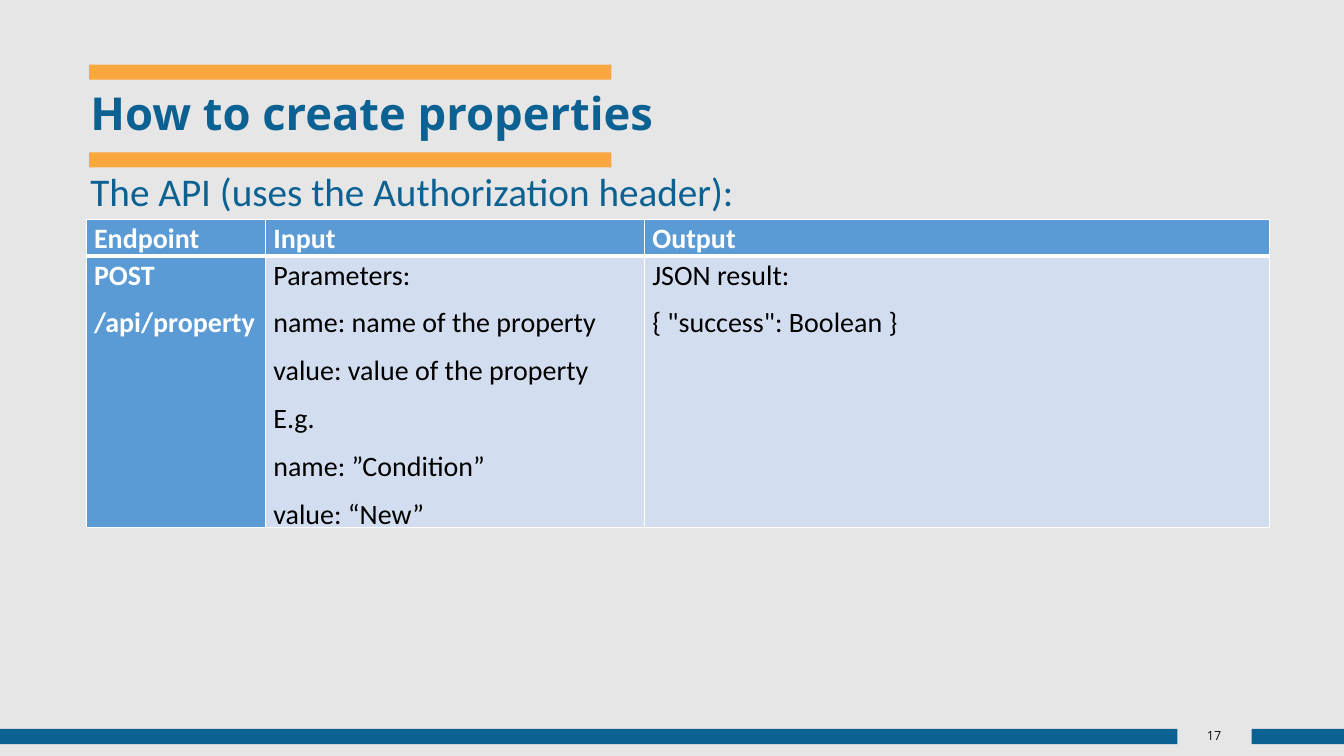
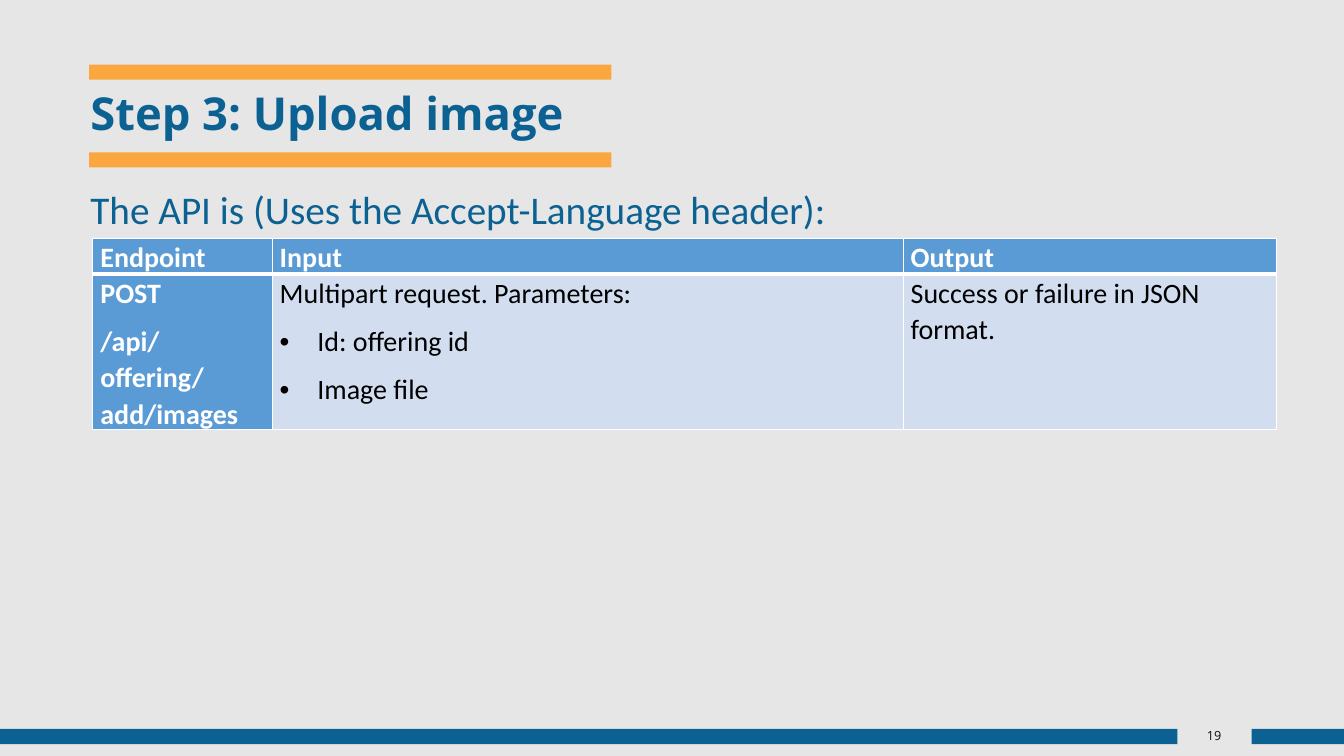
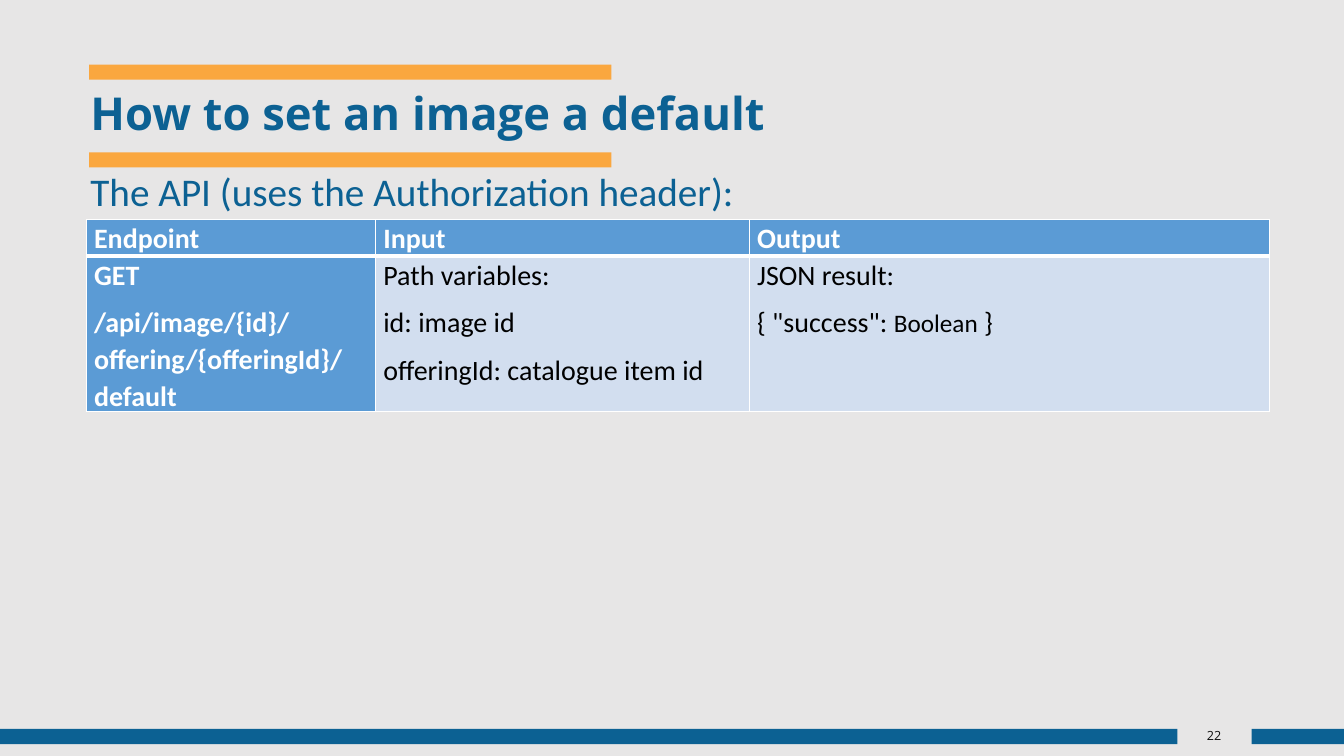
from dataclasses import dataclass
from typing import Any

from lxml.etree import SubElement
from pptx import Presentation
from pptx.dml.color import RGBColor as RGB
from pptx.enum.shapes import MSO_SHAPE as SHAPE
from pptx.enum.text import MSO_ANCHOR as ANCHOR, PP_ALIGN as ALIGN
from pptx.oxml.ns import qn
from pptx.util import Cm, Pt


@dataclass(frozen=True)
class Theme:
    paper: RGB = RGB.from_string("E7E6E6")
    orange: RGB = RGB.from_string("FAA73F")
    navy: RGB = RGB.from_string("0C6193")
    head: RGB = RGB.from_string("5B9BD5")
    body: RGB = RGB.from_string("D2DEEF")
    white: RGB = RGB.from_string("FFFFFF")
    black: RGB = RGB.from_string("000000")
    number: RGB = RGB.from_string("0D0D0D")
    display: str = "Open Sans"
    text: str = "Calibri"
    title_pt: float = 32.4
    intro_pt: float = 28
    cell_pt: float = 20
    small_pt: float = 18
    number_pt: float = 9


T = Theme()


@dataclass(frozen=True)
class Box:
    x: float
    y: float
    w: float
    h: float

    def emu(self) -> tuple[Cm, Cm, Cm, Cm]:
        return Cm(self.x), Cm(self.y), Cm(self.w), Cm(self.h)


@dataclass(frozen=True)
class Band:
    box: Box
    color: RGB


@dataclass(frozen=True)
class Line:
    text: str
    bullet: bool = False
    small: str = ""


@dataclass(frozen=True)
class ApiPage:
    number: str
    title: str
    intro: str
    intro_y: float
    table_x: float
    widths: tuple[float, ...]
    body_h: float
    cells: tuple[tuple[Line, ...], ...]
    title_w: float = 29.51


BAND_H = 0.38
INTRO_H = 1.45
HEAD_H = 0.91
BULLET_INDENT = Cm(0.95)
HEADINGS = ("Endpoint", "Input", "Output")
BANDS = (
    Band(Box(2.25, 1.63, 13.16, BAND_H), T.orange),
    Band(Box(2.25, 3.84, 13.16, BAND_H), T.orange),
    Band(Box(0, 18.37, 29.67, BAND_H), T.navy),
    Band(Box(31.54, 18.37, 2.33, BAND_H), T.navy),
)
CELL_FMT = {"margin_left": Cm(0.19), "margin_right": Cm(0.19),
            "margin_top": 0, "margin_bottom": 0}
CELL_P_FMT = {"line_spacing": 1.07, "space_after": Pt(8)}

PAGES = (
    ApiPage(
        "17", "How to create properties",
        "The API (uses the Authorization header):",
        4.09, 2.18, (4.52, 9.55, 15.75), 6.84,
        (
            (Line("POST"), Line("/api/property")),
            (Line("Parameters:"), Line("name: name of the property"),
             Line("value: value of the property"), Line("E.g."),
             Line("name: ”Condition”"), Line("value: “New”")),
            (Line("JSON result:"), Line('{ "success": Boolean }')),
        ),
    ),
    ApiPage(
        "19", "Step 3: Upload image",
        "The API is (Uses the Accept-Language header):",
        4.55, 2.34, (4.52, 15.9, 9.4), 3.91,
        (
            (Line("POST"), Line("/api/offering/add/images")),
            (Line("Multipart request. Parameters:"),
             Line("Id: offering id", bullet=True),
             Line("Image file", bullet=True)),
            (Line("Success or failure in JSON format."),),
        ),
        title_w=13.87,
    ),
    ApiPage(
        "22", "How to set an image a default",
        "The API (uses the Authorization header):",
        4.09, 2.18, (7.29, 9.42, 13.11), 3.91,
        (
            (Line("GET"), Line("/api/image/{id}/offering/{offeringId}/default")),
            (Line("Path variables:"), Line("id: image id"),
             Line("offeringId: catalogue item id")),
            (Line("JSON result:"),
             Line('{ "success": Boolean }', small="Boolean")),
        ),
    ),
)


def apply(target: Any, fmt: dict[str, Any]) -> None:
    for name, value in fmt.items():
        setattr(target, name, value)


def add_run(p: Any, text: str, color: RGB, **font: Any) -> None:
    r = p.add_run()
    r.text = text
    apply(r.font, font)
    r.font.color.rgb = color


def add_band(s: Any, band: Band) -> None:
    sp = s.shapes.add_shape(SHAPE.RECTANGLE, *band.box.emu())
    sp.shadow.inherit = False
    sp.fill.solid()
    sp.fill.fore_color.rgb = band.color
    sp.line.fill.background()


def add_text(s: Any, box: Box, text: str, color: RGB, anchor: ANCHOR,
             p_fmt: dict[str, Any], **font: Any) -> None:
    tf = s.shapes.add_textbox(*box.emu()).text_frame
    apply(tf, {"word_wrap": True, "vertical_anchor": anchor})
    p = tf.paragraphs[0]
    apply(p, p_fmt)
    add_run(p, text, color, **font)


def add_border(cell: Any, side: str, width: float) -> None:
    ln = SubElement(cell._tc.get_or_add_tcPr(), qn(f"a:ln{side}"), w=str(Pt(width)))
    fill = SubElement(ln, qn("a:solidFill"))
    SubElement(fill, qn("a:srgbClr"), val=str(T.white))


def add_bullet(p: Any) -> None:
    pPr = p._p.get_or_add_pPr()
    pPr.set("marL", str(BULLET_INDENT))
    pPr.set("indent", str(-BULLET_INDENT))
    SubElement(pPr, qn("a:buFont"), typeface="Arial")
    SubElement(pPr, qn("a:buChar"), char="•")


def fill_cell(cell: Any, lines: tuple[Line, ...], is_head: bool, is_label: bool) -> None:
    apply(cell, CELL_FMT)
    top, bottom = (1, 3) if is_head else (3, 1)
    for side, width in {"L": 1, "R": 1, "T": top, "B": bottom}.items():
        add_border(cell, side, width)
    cell.fill.solid()
    cell.fill.fore_color.rgb = T.head if is_label else T.body
    color = T.white if is_label else T.black
    tf = cell.text_frame
    for i, line in enumerate(lines):
        p = tf.add_paragraph() if i else tf.paragraphs[0]
        apply(p, CELL_P_FMT)
        if line.bullet:
            add_bullet(p)
        parts = line.text.partition(line.small) if line.small else (line.text,)
        for part in parts:
            size = T.small_pt if part == line.small else T.cell_pt
            add_run(p, part, color, name=T.text, size=Pt(size), bold=is_label)


def add_api_table(s: Any, page: ApiPage) -> None:
    box = Box(page.table_x, page.intro_y + INTRO_H, sum(page.widths), HEAD_H + page.body_h)
    table = s.shapes.add_table(2, len(page.widths), *box.emu()).table
    for column, width in zip(table.columns, page.widths):
        column.width = Cm(width)
    for row, height in zip(table.rows, (HEAD_H, page.body_h)):
        row.height = Cm(height)
    rows = (tuple((Line(h),) for h in HEADINGS), page.cells)
    for i, row in enumerate(rows):
        for j, lines in enumerate(row):
            fill_cell(table.cell(i, j), lines, i == 0, i == 0 or j == 0)


def add_page(prs: Any, page: ApiPage) -> None:
    s = prs.slides.add_slide(prs.slide_layouts[6])
    for band in BANDS:
        add_band(s, band)
    add_text(s, Box(29.67, 18.16, 1.85, 0.74), page.number, T.number, ANCHOR.MIDDLE,
             {"alignment": ALIGN.CENTER}, name=T.display, size=Pt(T.number_pt))
    add_text(s, Box(2.03, 2.24, page.title_w, 1.35), page.title, T.navy, ANCHOR.MIDDLE,
             {"line_spacing": 0.9}, name=T.display, size=Pt(T.title_pt), bold=True)
    add_text(s, Box(2.03, page.intro_y, 30.15, INTRO_H), page.intro, T.navy, ANCHOR.TOP,
             {"space_after": Pt(3)}, name=T.text, size=Pt(T.intro_pt))
    add_api_table(s, page)


def main() -> None:
    prs = Presentation()
    apply(prs, {"slide_width": Cm(33.87), "slide_height": Cm(19.05)})
    background = prs.slide_master.background.fill
    background.solid()
    background.fore_color.rgb = T.paper
    for page in PAGES:
        add_page(prs, page)
    prs.save("out.pptx")


if __name__ == "__main__":
    main()
